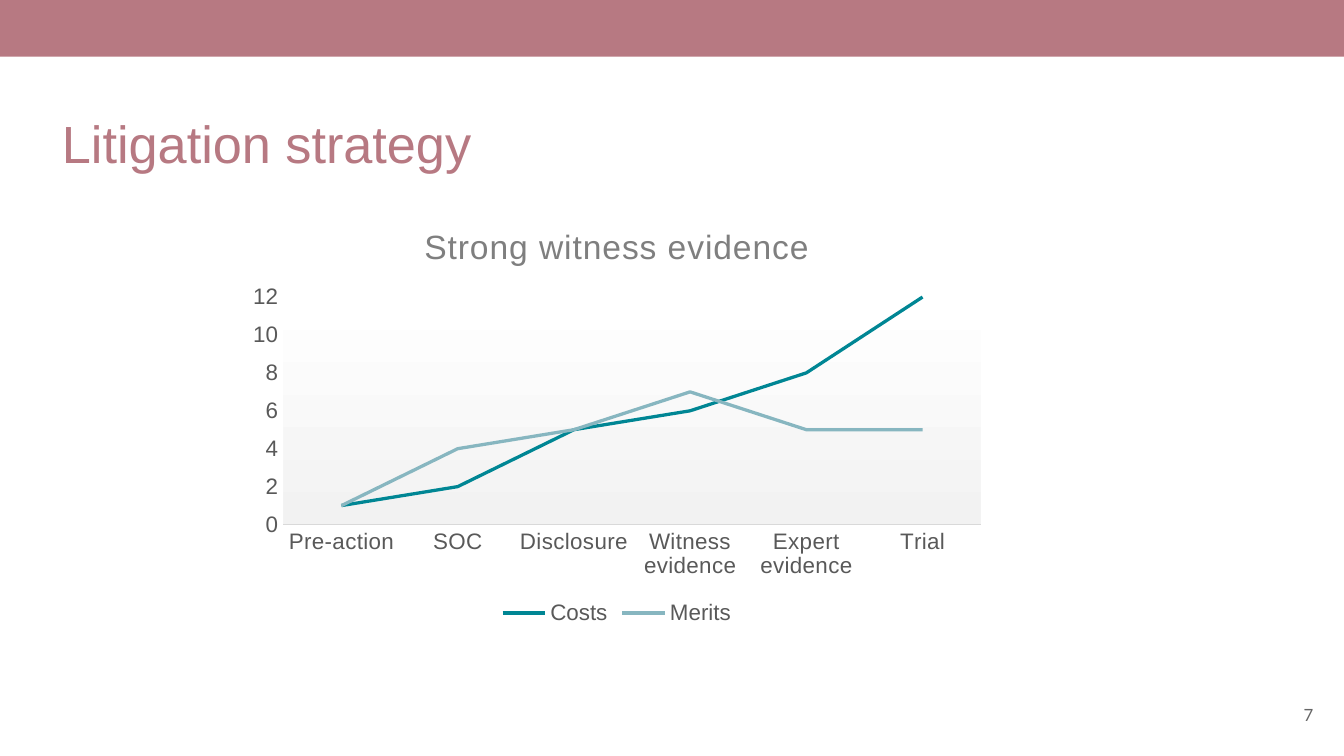
from dataclasses import dataclass

import pptx
import pptx.chart.data
import pptx.dml.color
import pptx.enum.chart
import pptx.enum.shapes
import pptx.enum.text
import pptx.oxml
import pptx.oxml.ns
import pptx.util

Pt = pptx.util.Pt
ROSE = "B77982"
GREY = "595959"
STAGES = ["Pre-action", "SOC", "Disclosure", "Witness evidence", "Expert evidence", "Trial"]


@dataclass
class Trend:
    name: str
    values: list[int]
    color: str


TRENDS = [
    Trend("Costs", [1, 2, 5, 6, 8, 12], "008694"),
    Trend("Merits", [1, 4, 5, 7, 5, 5], "87B6C0"),
]


def rgb(value: str) -> pptx.dml.color.RGBColor:
    return pptx.dml.color.RGBColor.from_string(value)


def set_font(font, size: float, color: str, name: str = "Arial") -> None:
    font.size = Pt(size)
    font.name = name
    font.bold = False
    font.color.rgb = rgb(color)


def set_margins(frame) -> None:
    frame.margin_left = frame.margin_right = Pt(7.2)
    frame.margin_top = frame.margin_bottom = Pt(7.2)
    frame.word_wrap = True


def shape_properties(fill: str):
    """Make the fill properties of a chart part, without an outline."""
    return pptx.oxml.parse_xml(
        f'<c:spPr {pptx.oxml.ns.nsdecls("c", "a")}>{fill}<a:ln><a:noFill/></a:ln></c:spPr>'
    )


def solid(color: str) -> str:
    return f'<a:solidFill><a:srgbClr val="{color}"/></a:solidFill>'


def vertical_gradient(top: str, bottom: str) -> str:
    return (
        '<a:gradFill><a:gsLst>'
        f'<a:gs pos="0"><a:srgbClr val="{top}"/></a:gs>'
        f'<a:gs pos="100000"><a:srgbClr val="{bottom}"/></a:gs>'
        '</a:gsLst><a:lin ang="5400000" scaled="0"/></a:gradFill>'
    )


def style_axis(axis) -> None:
    axis.has_major_gridlines = False
    axis.major_tick_mark = axis.minor_tick_mark = pptx.enum.chart.XL_TICK_MARK.NONE
    set_font(axis.tick_labels.font, 12, GREY)


def add_banner(slide, width: int) -> None:
    banner = slide.shapes.add_shape(pptx.enum.shapes.MSO_SHAPE.RECTANGLE, 0, 0, width, Pt(30.4))
    banner.shadow.inherit = False
    banner.fill.solid()
    banner.fill.fore_color.rgb = rgb(ROSE)
    banner.line.fill.background()


def add_title(slide, text: str) -> None:
    title = slide.shapes.title
    title.left, title.top, title.width, title.height = Pt(26), Pt(52.5), Pt(656.5), Pt(47.5)
    frame = title.text_frame
    frame.text = text
    set_margins(frame)
    frame.auto_size = pptx.enum.text.MSO_AUTO_SIZE.NONE
    frame.vertical_anchor = pptx.enum.text.MSO_ANCHOR.TOP
    frame.paragraphs[0].alignment = pptx.enum.text.PP_ALIGN.LEFT
    set_font(frame.paragraphs[0].font, 28, ROSE)


def add_page_number(slide, number: str) -> None:
    frame = slide.shapes.add_textbox(Pt(667.5), Pt(367.2), Pt(43.2), Pt(31)).text_frame
    set_margins(frame)
    frame.vertical_anchor = pptx.enum.text.MSO_ANCHOR.MIDDLE
    paragraph = frame.paragraphs[0]
    paragraph.text = number
    paragraph.alignment = pptx.enum.text.PP_ALIGN.RIGHT
    set_font(paragraph.font, 9, "666666", "Lato")


def add_trend_chart(slide, heading: str, trends: list[Trend]) -> None:
    data = pptx.chart.data.CategoryChartData()
    data.categories = STAGES
    for trend in trends:
        data.add_series(trend.name, trend.values)
    chart = slide.shapes.add_chart(
        pptx.enum.chart.XL_CHART_TYPE.LINE, Pt(127.5), Pt(108.7), Pt(406), Pt(229), data
    ).chart
    set_font(chart.font, 10, "000000")

    chart.has_title = True
    chart.chart_title.include_in_layout = False
    title_paragraph = chart.chart_title.text_frame.paragraphs[0]
    title_paragraph.text = heading
    set_font(title_paragraph.font, 18, "7F7F7F")
    title_paragraph.font._element.set("spc", "50")

    chart.has_legend = True
    chart.legend.position = pptx.enum.chart.XL_LEGEND_POSITION.BOTTOM
    chart.legend.include_in_layout = False
    set_font(chart.legend.font, 12, GREY)

    stages, scale = chart.category_axis, chart.value_axis
    style_axis(stages)
    stages.tick_labels.font._element.set("spc", "20")
    stages.format.line.color.rgb = rgb("D9D9D9")
    stages.format.line.width = Pt(0.75)
    style_axis(scale)
    scale.minimum_scale, scale.maximum_scale, scale.major_unit = 0, 12, 2
    scale.format.line.fill.background()

    plot = chart.plots[0]
    plot.vary_by_categories = False
    for series, trend in zip(plot.series, trends):
        series.smooth = False
        series.marker.style = pptx.enum.chart.XL_MARKER_STYLE.NONE
        series.format.line.color.rgb = rgb(trend.color)
        series.format.line.width = Pt(1.75)

    chart_space = chart._chartSpace
    chart_space.find(pptx.oxml.ns.qn("c:txPr")).addprevious(shape_properties(solid("FFFFFF")))
    plot_area = chart_space.chart.plotArea
    plot_area.append(shape_properties(vertical_gradient("FFFFFF", "F2F2F2")))


def main() -> None:
    deck = pptx.Presentation()
    deck.slide_width, deck.slide_height = Pt(720), Pt(405)
    slide = deck.slides.add_slide(deck.slide_layouts[5])
    add_banner(slide, deck.slide_width)
    add_page_number(slide, "7")
    add_title(slide, "Litigation strategy")
    add_trend_chart(slide, "Strong witness evidence", TRENDS)
    deck.save("out.pptx")


if __name__ == "__main__":
    main()
